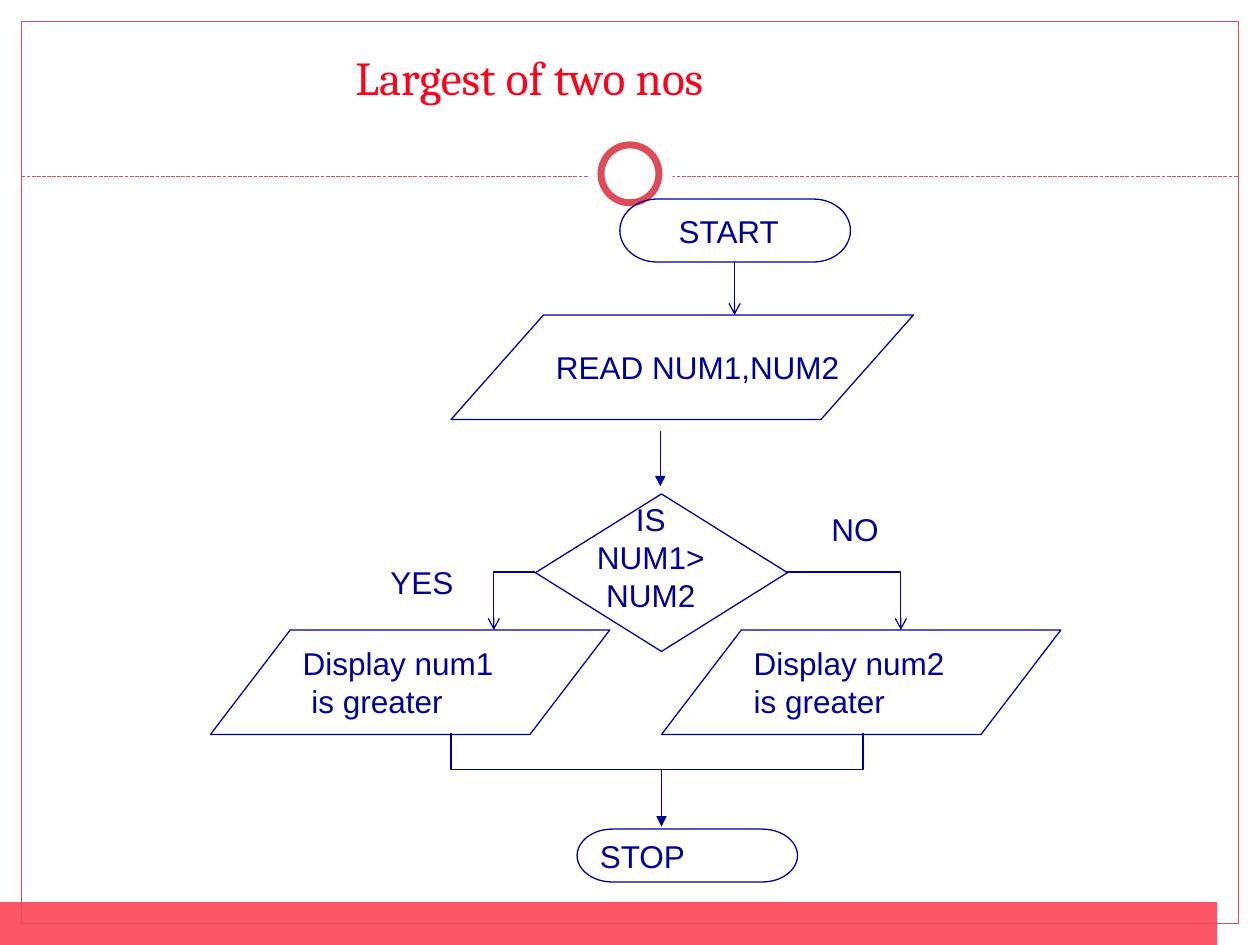
from lxml import etree
from pptx import Presentation
from pptx.dml.color import RGBColor
from pptx.enum.dml import MSO_LINE
from pptx.enum.shapes import MSO_CONNECTOR, MSO_SHAPE
from pptx.enum.text import MSO_ANCHOR, PP_ALIGN
from pptx.oxml.ns import qn
from pptx.util import Inches, Pt

RECT, OVAL = MSO_SHAPE.RECTANGLE, MSO_SHAPE.OVAL
DATA, TEST = MSO_SHAPE.FLOWCHART_DATA, MSO_SHAPE.FLOWCHART_DECISION
CAP = MSO_SHAPE.FLOWCHART_TERMINATOR
LINE, BENT = MSO_CONNECTOR.STRAIGHT, MSO_CONNECTOR.ELBOW
DASH = MSO_LINE.SQUARE_DOT
MIDDLE, TOP = MSO_ANCHOR.MIDDLE, MSO_ANCHOR.TOP
LEFT, CENTER = PP_ALIGN.LEFT, PP_ALIGN.CENTER

COLORS = {"ink": "000099", "frame": "DE4C5A", "band": "FC5666",
          "title": "F9041C", "white": "FFFFFF"}

TITLE = "Largest of two nos"
DECOR = [
    (RECT, (0, 7.16, 9.66, 0.34), "band", None, 0),
    (RECT, (0.17, 0.17, 9.66, 7.16), None, "frame", 0.75),
]
RINGS = [
    (OVAL, (4.67, 1.05, 0.67, 0.67), "white", None, 0),
    (OVAL, (4.77, 1.15, 0.46, 0.46), "white", "frame", 4),
]
STEPS = [
    (TEST, (4.25, 3.92, 2, 1.25), [], 0.1),
    (DATA, (3.58, 2.5, 3.67, 0.83), [("READ NUM1,NUM2", 0)], 0.1),
    (CAP, (4.92, 1.58, 1.83, 0.5), [("START", 0)], 0.38),
    (CAP, (4.58, 6.58, 1.75, 0.42), [("STOP", 0)], 0.1),
    (DATA, (5.25, 5, 3.17, 0.83), [("Display num2", 0), ("is greater", 0)], 0.1),
    (DATA, (1.67, 5, 3.17, 0.83), [("Display num1", 0), ("is greater", 0.07)], 0.1),
]
LABELS = [
    ("IS NUM1>NUM2", (4.58, 3.92, 1.17, 1.01), CENTER),
    ("YES", (3, 4.42, 0.83, 0.4), LEFT),
    ("NO", (6.5, 4, 0.83, 0.4), LEFT),
]
LINKS = [
    (LINE, (3.58, 5.82, 3.58, 6.11), None),
    (LINE, (6.85, 5.82, 6.85, 6.11), None),
    (LINE, (6.85, 6.11, 3.58, 6.11), None),
    (LINE, (5.25, 6.11, 5.25, 6.56), "triangle"),
    (LINE, (5.24, 3.42, 5.24, 3.86), "triangle"),
    (LINE, (5.83, 2.08, 5.83, 2.5), "arrow"),
    (BENT, (6.25, 4.54, 7.15, 5), "arrow"),
    (BENT, (4.25, 4.54, 3.92, 5), "arrow"),
]


def color(name):
    return RGBColor.from_string(COLORS[name])


def place(box):
    return [Inches(n) for n in box]


def add_form(slide, kind, box, fill, line, width):
    form = slide.shapes.add_shape(kind, *place(box))
    form.shadow.inherit = False
    if fill:
        form.fill.solid()
        form.fill.fore_color.rgb = color(fill)
    else:
        form.fill.background()
    if line:
        form.line.color.rgb = color(line)
        form.line.width = Pt(width)
    else:
        form.line.fill.background()
    return form


def add_link(slide, kind, ends, hue, head=None):
    link = slide.shapes.add_connector(kind, *place(ends))
    link.line.color.rgb = color(hue)
    link.line.width = Pt(0.75)
    props = link._element.spPr
    if kind == BENT:
        props.find(qn("a:prstGeom")).set("prst", "bentConnector2")
    if head:
        etree.SubElement(props.find(qn("a:ln")), qn("a:tailEnd"), type=head)
    etree.SubElement(props, qn("a:effectLst"))
    return link


def write(frame, rows, align, wrap, anchor):
    frame.word_wrap = wrap
    frame.vertical_anchor = anchor
    for i, (text, indent) in enumerate(rows):
        para = frame.paragraphs[0] if i == 0 else frame.add_paragraph()
        para.text = text
        para.alignment = align
        style(para.font, "Arial", 18, "ink")
        if indent:
            para._p.get_or_add_pPr().set("marL", str(Inches(indent)))


def style(font, name, size, hue):
    font.name = name
    font.size = Pt(size)
    font.color.rgb = color(hue)


def main():
    deck = Presentation()
    deck.slide_width, deck.slide_height = Inches(10), Inches(7.5)
    slide = deck.slides.add_slide(deck.slide_layouts[5])

    for item in DECOR:
        add_form(slide, *item)
    rule = add_link(slide, LINE, (0.17, 1.4, 9.83, 1.4), "frame")
    rule.line.dash_style = DASH
    for item in RINGS:
        add_form(slide, *item)

    title = slide.shapes.title
    title.left, title.top, title.width, title.height = place((0.33, 0.33, 9.3, 0.56))
    frame = title.text_frame
    frame.text = TITLE
    frame.margin_left = Inches(2.49)
    frame.vertical_anchor = MIDDLE
    frame.paragraphs[0].alignment = LEFT
    style(frame.paragraphs[0].font, "Cambria", 27, "title")

    for kind, box, rows, inset in STEPS:
        form = add_form(slide, kind, box, None, "ink", 0.75)
        form.text_frame.margin_left = Inches(inset)
        write(form.text_frame, rows, LEFT, False, MIDDLE)
    for text, box, align in LABELS:
        label = slide.shapes.add_textbox(*place(box))
        write(label.text_frame, [(text, 0)], align, True, TOP)
    for kind, ends, head in LINKS:
        add_link(slide, kind, ends, "ink", head)

    deck.save("out.pptx")


if __name__ == "__main__":
    main()
